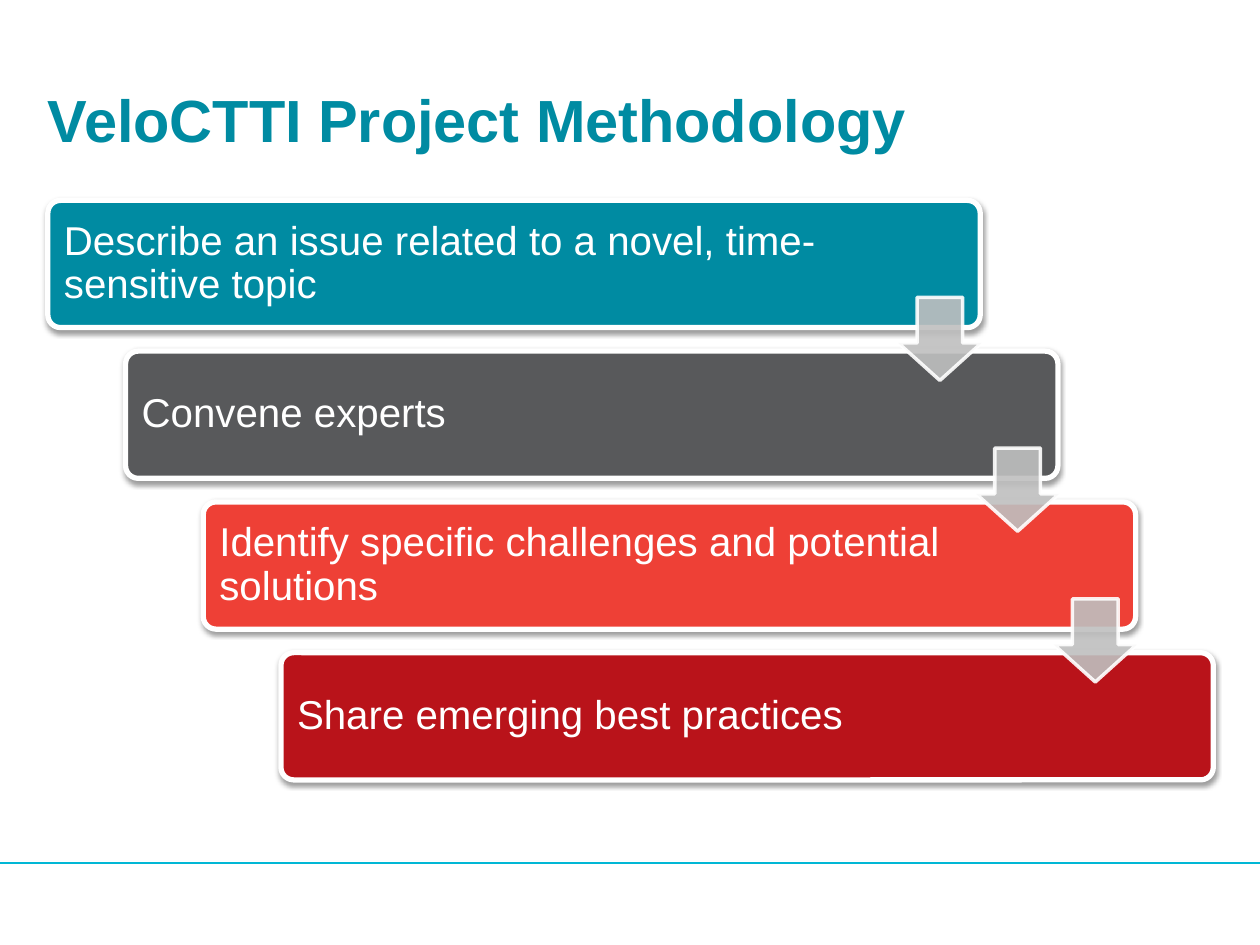
from lxml.etree import SubElement
from pptx import Presentation
from pptx.dml.color import RGBColor
from pptx.enum.shapes import MSO_CONNECTOR, MSO_SHAPE
from pptx.enum.text import MSO_ANCHOR, PP_ALIGN
from pptx.oxml.ns import qn
from pptx.util import Inches, Pt

STEPS = [
    ("Describe an issue related to a novel, time-sensitive topic", "008BA2"),
    ("Convene experts", "58595B"),
    ("Identify specific challenges and potential solutions", "EE4036"),
    ("Share emerging best practices", "B9131A"),
]
TITLE = {"name": "Arial", "size": Pt(34), "bold": True}
BODY = {"name": "Arial", "size": Pt(23), "bold": False}


def color(code):
    return RGBColor.from_string(code)


def style(target, values):
    for key, value in values.items():
        setattr(target, key, value)


def fade(node, share):
    for tone in node.iter(qn("a:srgbClr")):
        SubElement(tone, qn("a:alpha"), val=str(share * 1000))


def shade(shape, share, gap):
    effects = shape._element.spPr.find(qn("a:effectLst"))
    shadow = SubElement(effects, qn("a:outerShdw"), blurRad=str(Pt(3.1)),
                        dist=str(Pt(gap)), dir="5400000", rotWithShape="0")
    SubElement(shadow, qn("a:srgbClr"), val="000000")
    fade(shadow, share)


def add_block(slide, kind, box, fill, width=0):
    shape = slide.shapes.add_shape(kind, *map(Inches, box))
    shape.shadow.inherit = False
    shape.fill.solid()
    shape.fill.fore_color.rgb = color(fill)
    if width:
        shape.line.color.rgb = color("FFFFFF")
        shape.line.width = Pt(width)
    else:
        shape.line.fill.background()
    return shape


def write(shape, text, font, tint, sides):
    frame = shape.text_frame
    left, top, right, bottom = map(Inches, sides)
    style(frame, {"word_wrap": True, "vertical_anchor": MSO_ANCHOR.MIDDLE,
                  "margin_left": left, "margin_top": top,
                  "margin_right": right, "margin_bottom": bottom})
    para = frame.paragraphs[0]
    para.text = text
    para.alignment = PP_ALIGN.LEFT
    style(para.font, font)
    para.font.color.rgb = color(tint)
    return para


def add_title(slide, box):
    shape = slide.shapes.add_textbox(*map(Inches, box))
    write(shape, "VeloCTTI Project Methodology", TITLE, "008BA2", (0, 0, 0, 0))


def add_footer(slide, box):
    left, top, width, height = box
    bar = add_block(slide, MSO_SHAPE.RECTANGLE, box, "FFFFFF")
    shade(bar, 35, 1.8)
    level = top + 0.02
    rule = slide.shapes.add_connector(
        MSO_CONNECTOR.STRAIGHT,
        *map(Inches, (left, level, left + width, level)))
    rule.line.color.rgb = color("00B7D5")
    rule.line.width = Pt(0.75)
    SubElement(rule._element.spPr, qn("a:effectLst"))


def add_stairs(slide, box):
    left, top, width, height = box
    wide, high, size = 7.4, 1.01, 0.66
    count = len(STEPS) - 1
    across, down = (width - wide) / count, (height - high) / count
    spots = [(left + i * across, top + i * down) for i in range(count + 1)]
    for (x, y), (text, fill) in zip(spots, STEPS):
        step = add_block(slide, MSO_SHAPE.ROUNDED_RECTANGLE,
                         (x, y, wide, high), fill, 3)
        step.adjustments[0] = 0.1
        shade(step, 38, 1.6)
        para = write(step, text, BODY, "FFFFFF", (0.1, 0.1, 1.21, 0.1))
        para.line_spacing = 0.9
    for x, y in spots[:-1]:
        arrow = add_block(slide, MSO_SHAPE.DOWN_ARROW,
                          (x + 6.75, y + 0.77, size, size), "BFBFBF", 2)
        arrow.adjustments[0] = 0.55
        arrow.adjustments[1] = 0.45
        fade(arrow._element.spPr, 90)


def main():
    deck = Presentation()
    deck.slide_width, deck.slide_height = Inches(10), Inches(7.5)
    slide = deck.slides.add_slide(deck.slide_layouts[6])
    add_footer(slide, (0, 6.83, 10, 0.67))
    add_title(slide, (0.38, 0.52, 9.25, 0.84))
    add_stairs(slide, (0.38, 1.59, 9.25, 4.6))
    deck.save("out.pptx")


if __name__ == "__main__":
    main()
